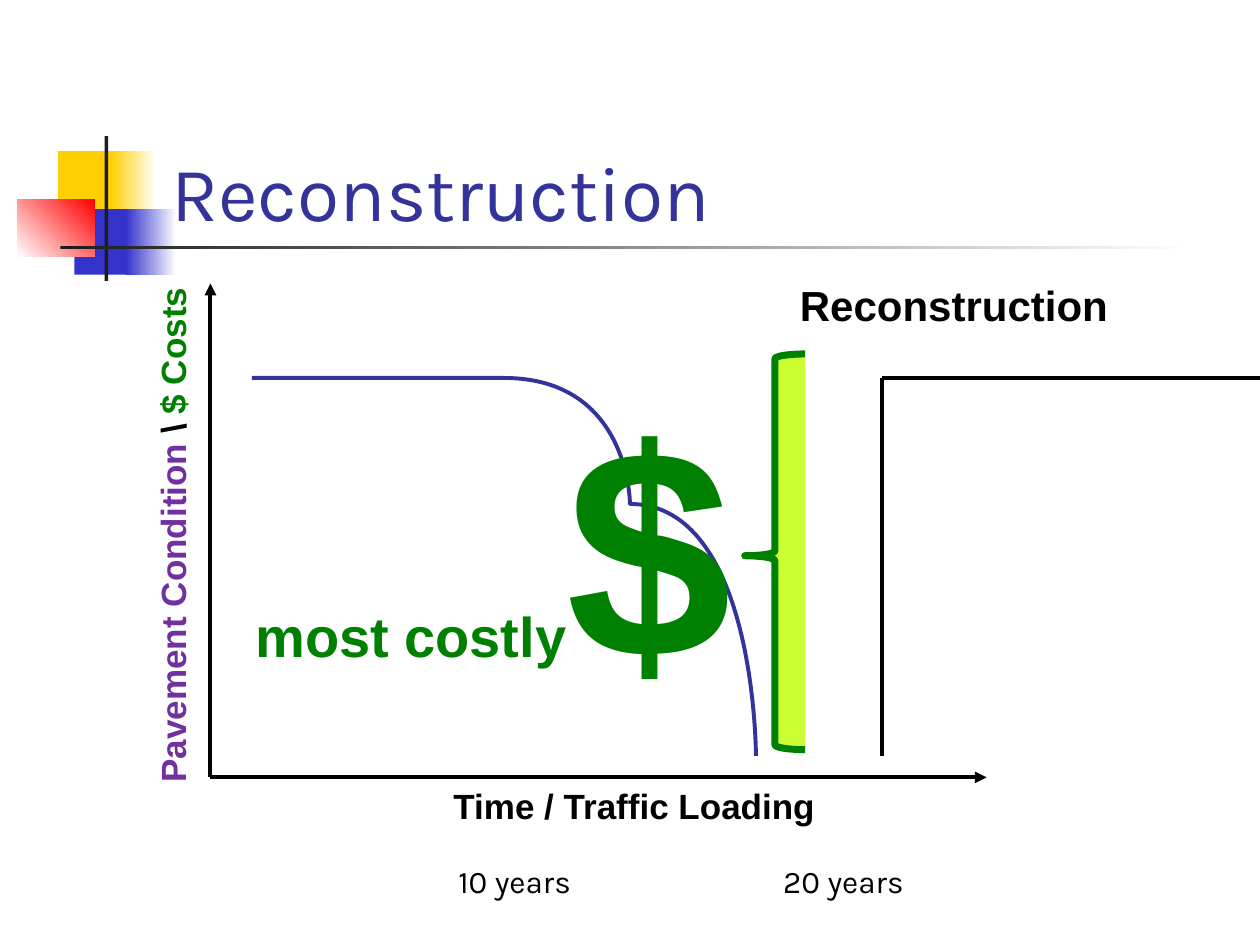
from lxml import etree
from pptx import Presentation
from pptx import util as u
from pptx.dml.color import RGBColor
from pptx.enum import shapes, text
from pptx.oxml.ns import qn

COLORS = {
    "white": "FFFFFF", "black": "000000", "charcoal": "1C1C1C",
    "yellow": "FFCF01", "blue": "3333CC", "red": "FF0000",
    "navy": "333399", "purple": "7030A0", "green": "008000", "lime": "CCFF33",
}

# box, fill colours (two make a gradient), gradient angle
ORNAMENT = [
    ((0.46, 1.2, 0.48, 0.52), ["yellow"], 0),
    ((0.88, 1.2, 0.36, 0.52), ["yellow", "white"], 0),
    ((0.59, 1.66, 0.46, 0.52), ["blue"], 0),
    ((1, 1.66, 0.4, 0.52), ["blue", "white"], 0),
    ((0.14, 1.58, 0.61, 0.46), ["white", "red"], 45),
    ((0.83, 1.08, 0.03, 1.15), ["charcoal"], 0),
    ((0.48, 1.95, 9, 0.03), ["charcoal", "white"], 0),
]

TITLE = ("Reconstruction", 44, "navy")
AXIS_LABELS = [
    ((-0.75, 3.97, 4.24, 0.44), 270, [("Pavement Condition ", 20, "purple"),
                                      ("\\ ", 20, "black"), ("$ Costs", 20, "green")]),
    ((3.5, 6.18, 3.2, 0.44), 0, [("Time / Traffic Loading", 20, "black")]),
]
CURVE_LABEL = ((6.25, 2.17, 2.65, 0.5), [("Reconstruction", 24, "black")])
COST_LABEL = ((1.89, 2.81, 4.02, 2.96), [("most costly", 32, "green"), ("$", 170, "green")])
YEARS = [("20 years", 6.03), ("10 years", 3.42)]

ORIGIN = (1.67, 6.17)
AXIS_ENDS = [(1.67, 2.25), (7.83, 6.17)]

# start point, then three Bezier points for each segment
DETERIORATION = [
    (1.67, 2.72), (2.04, 2.69), (2.42, 2.67), (2.83, 2.72),
    (3.25, 2.78), (3.76, 2.85), (4.17, 3.06),
    (4.57, 3.27), (4.86, 3.51), (5.25, 3.98),
    (5.64, 4.46), (6.23, 5.53), (6.49, 5.94),
]
REBUILD = [(6.54, 5.94), (6.53, 2.75)]
RENEWED_LIFE = [
    (6.53, 2.75), (6.89, 2.78), (8.16, 2.81), (8.69, 2.92),
    (9.22, 3.02), (9.48, 3.28), (9.69, 3.38),
]
BRACE = (5.91, 2.81, 0.48, 3.14)


def rgb(name):
    return RGBColor.from_string(COLORS[name])


def inches(values):
    return [u.Inches(value) for value in values]


def set_line(shape, color, width):
    shape.line.color.rgb = rgb(color)
    shape.line.width = u.Pt(width)


def add_block(slide, box, colors, angle):
    block = slide.shapes.add_shape(shapes.MSO_SHAPE.RECTANGLE, *inches(box))
    block.shadow.inherit = False
    block.line.fill.background()
    if len(colors) == 1:
        block.fill.solid()
        block.fill.fore_color.rgb = rgb(colors[0])
        return
    block.fill.gradient()
    block.fill.gradient_angle = angle
    for position, (stop, color) in enumerate(zip(block.fill.gradient_stops, colors)):
        stop.position = position
        stop.color.rgb = rgb(color)


def add_runs(paragraph, runs, font, bold):
    for words, size, color in runs:
        run = paragraph.add_run()
        run.text = words
        run.font.name = font
        run.font.size = u.Pt(size)
        run.font.bold = bold
        run.font.color.rgb = rgb(color)


def add_label(slide, box, runs, font="Arial", bold=True, align=None, wrap=False, rotation=0):
    label = slide.shapes.add_textbox(*inches(box))
    label.rotation = rotation
    frame = label.text_frame
    frame.word_wrap = wrap
    frame.auto_size = text.MSO_AUTO_SIZE.SHAPE_TO_FIT_TEXT
    paragraph = frame.paragraphs[0]
    paragraph.alignment = align
    add_runs(paragraph, runs, font, bold)
    return paragraph


def add_axis(slide, end):
    axis = slide.shapes.add_connector(
        shapes.MSO_CONNECTOR.STRAIGHT, *inches(ORIGIN + end))
    set_line(axis, "black", 2.25)
    properties = axis._element.spPr
    etree.SubElement(axis.line._get_or_add_ln(), qn("a:tailEnd"), type="triangle")
    etree.SubElement(properties, qn("a:effectLst"))


def add_curve(slide, points, color, smooth=True):
    """Draw straight segments, or turn each three of them into one Bezier segment."""
    builder = slide.shapes.build_freeform(*points[0], scale=u.Inches(1))
    builder.add_line_segments(points[1:], close=False)
    curve = builder.convert_to_shape()
    curve.shadow.inherit = False
    curve.fill.background()
    set_line(curve, color, 2.25)
    if smooth:
        outline = next(curve._element.iter(qn("a:path")))
        segments = outline.findall(qn("a:lnTo"))
        for first in range(0, len(segments), 3):
            bezier = etree.SubElement(outline, qn("a:cubicBezTo"))
            for segment in segments[first:first + 3]:
                bezier.append(segment[0])
                outline.remove(segment)


def main():
    deck = Presentation()
    deck.slide_width, deck.slide_height = inches((10, 7.5))
    slide = deck.slides.add_slide(deck.slide_layouts[5])

    for box, colors, angle in ORNAMENT:
        add_block(slide, box, colors, angle)

    title = slide.shapes.title
    title.left, title.top, title.width, title.height = inches((1.26, 0.68, 8.52, 1.25))
    title.text_frame.vertical_anchor = text.MSO_ANCHOR.BOTTOM
    heading = title.text_frame.paragraphs[0]
    heading.alignment = text.PP_ALIGN.LEFT
    add_runs(heading, [TITLE], "Karla", False)

    for box, rotation, runs in AXIS_LABELS:
        add_label(slide, box, runs, rotation=rotation)
    add_curve(slide, DETERIORATION, "navy")
    for end in AXIS_ENDS:
        add_axis(slide, end)
    add_curve(slide, REBUILD, "black", smooth=False)
    add_curve(slide, RENEWED_LIFE, "black")
    add_label(slide, *CURVE_LABEL)
    add_label(slide, *COST_LABEL, align=text.PP_ALIGN.RIGHT)

    brace = slide.shapes.add_shape(shapes.MSO_SHAPE.LEFT_BRACE, *inches(BRACE))
    brace.shadow.inherit = False
    brace.adjustments[0], brace.adjustments[1] = 0.08, 0.51
    brace.fill.solid()
    brace.fill.fore_color.rgb = rgb("lime")
    set_line(brace, "green", 4)

    for words, left in YEARS:
        year = add_label(slide, (left, 6.79, 1.33, 0.4), [(words, 18, "black")],
                         font="Karla", bold=False, align=text.PP_ALIGN.CENTER, wrap=True)
        year.space_before = u.Pt(9)

    deck.save("out.pptx")


if __name__ == "__main__":
    main()
